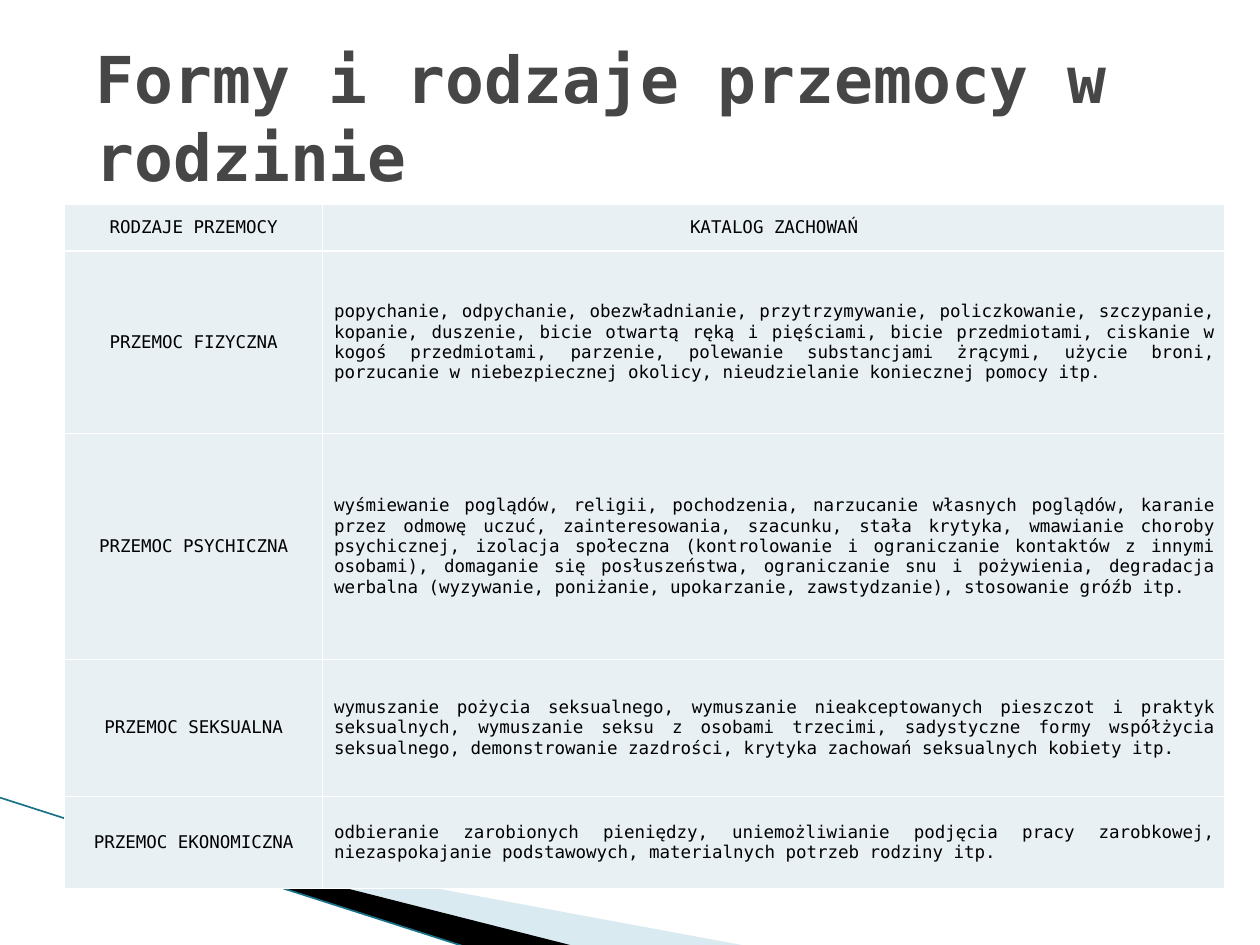
from lxml import etree
from pptx import Presentation
from pptx import util as u
from pptx.dml import color
from pptx.enum import shapes, text
from pptx.oxml import ns

COLOURS = {"title": "464646", "body": "000000", "cell": "E8F0F4", "border": "FFFFFF",
           "pale": "A0CBDC", "dark": "000000", "edge": "17728A"}
FONT = "DejaVu Sans Mono"
TITLE = {"name": FONT, "size": u.Pt(36.9), "bold": True}
BODY = {"name": FONT, "size": u.Pt(10), "bold": False}
CENTRE, JUSTIFY = text.PP_ALIGN.CENTER, text.PP_ALIGN.JUSTIFY
COLUMN_SHARES = (0.2225, 0.7775)
ROW_HEIGHTS = (0.94, 3.68, 4.55, 2.77, 1.85)
ROWS = [
    ("RODZAJE PRZEMOCY", "KATALOG ZACHOWAŃ"),
    ("PRZEMOC FIZYCZNA",
     "popychanie, odpychanie, obezwładnianie, przytrzymywanie, policzkowanie, szczypanie, "
     "kopanie, duszenie, bicie otwartą ręką i pięściami, bicie przedmiotami, ciskanie w kogoś "
     "przedmiotami, parzenie, polewanie substancjami żrącymi, użycie broni, porzucanie w "
     "niebezpiecznej okolicy, nieudzielanie koniecznej pomocy itp."),
    ("PRZEMOC PSYCHICZNA",
     "wyśmiewanie poglądów, religii, pochodzenia, narzucanie własnych poglądów, karanie przez "
     "odmowę uczuć, zainteresowania, szacunku, stała krytyka, wmawianie choroby psychicznej, "
     "izolacja społeczna (kontrolowanie i ograniczanie kontaktów z innymi osobami), domaganie "
     "się posłuszeństwa, ograniczanie snu i pożywienia, degradacja werbalna (wyzywanie, "
     "poniżanie, upokarzanie, zawstydzanie), stosowanie gróźb itp."),
    ("PRZEMOC SEKSUALNA",
     "wymuszanie pożycia seksualnego, wymuszanie nieakceptowanych pieszczot i praktyk "
     "seksualnych, wymuszanie seksu z osobami trzecimi, sadystyczne formy współżycia "
     "seksualnego, demonstrowanie zazdrości, krytyka zachowań seksualnych kobiety itp."),
    ("PRZEMOC EKONOMICZNA",
     "odbieranie zarobionych pieniędzy, uniemożliwianie podjęcia pracy zarobkowej, "
     "niezaspokajanie podstawowych, materialnych potrzeb rodziny itp."),
]


def rgb(name):
    """Return the named colour."""
    return color.RGBColor.from_string(COLOURS[name])


def write(para, words, style, colour, align):
    """Put one formatted span into a paragraph."""
    para.alignment = align
    span = para.add_run()
    span.text = words
    for key, value in style.items():
        setattr(span.font, key, value)
    span.font.color.rgb = rgb(colour)


def add_wedge(page, points, colour, opacity=100):
    """Draw a filled outline through points given in centimetres."""
    corners = [(u.Cm(x), u.Cm(y)) for x, y in points]
    builder = page.shapes.build_freeform(*corners[0])
    builder.add_line_segments(corners[1:], close=True)
    wedge = builder.convert_to_shape()
    wedge.shadow.inherit = False
    wedge.fill.solid()
    wedge.fill.fore_color.rgb = rgb(colour)
    wedge.line.fill.background()
    if opacity < 100:
        tint = wedge.fill._xPr.find(".//" + ns.qn("a:srgbClr"))
        etree.SubElement(tint, ns.qn("a:alpha"), val=str(opacity * 1000))


def add_corner(page, left, top):
    """Draw the slanted bands and their edge line in the lower left corner."""
    def shift(*points):
        """Move points into the corner's box."""
        return [(left + x, top + y) for x, y in points]

    add_wedge(page, shift((1.4, 0.46), (15.11, 3), (11.58, 3), (1.4, 0.43)), "pale", 40)
    add_wedge(page, shift((1.35, 0.4), (11.61, 3), (9.45, 3.02), (1.37, 0.43)), "dark")
    start, end = shift((0, 0), (9.42, 3.02))
    edge = page.shapes.add_connector(shapes.MSO_CONNECTOR.STRAIGHT,
                                     *(u.Cm(v) for v in start + end))
    edge.line.color.rgb = rgb("edge")
    edge.line.width = u.Pt(0.95)
    etree.SubElement(edge._element.spPr, ns.qn("a:effectLst"))


def add_title(page, left, top, width, height):
    """Place the heading."""
    box = page.shapes.add_textbox(*(u.Cm(v) for v in (left, top, width, height)))
    frame = box.text_frame
    frame.word_wrap = True
    frame.vertical_anchor = text.MSO_ANCHOR.MIDDLE
    write(frame.paragraphs[0], "Formy i rodzaje przemocy w rodzinie", TITLE, "title",
          text.PP_ALIGN.LEFT)


def add_borders(cell):
    """Give a cell thin borders on all four sides."""
    props = cell._tc.get_or_add_tcPr()
    for place, side in enumerate(("lnL", "lnR", "lnT", "lnB")):
        line = etree.Element(ns.qn("a:" + side), w=str(u.Pt(1)))
        fill = etree.SubElement(line, ns.qn("a:solidFill"))
        etree.SubElement(fill, ns.qn("a:srgbClr"), val=COLOURS["border"])
        props.insert(place, line)


def add_catalogue(page, left, top, width):
    """Place the table of kinds of violence and their behaviours."""
    frame = page.shapes.add_table(len(ROWS), len(COLUMN_SHARES), u.Cm(left), u.Cm(top),
                                  u.Cm(width), u.Cm(sum(ROW_HEIGHTS)))
    table = frame.table
    for column, share in zip(table.columns, COLUMN_SHARES):
        column.width = u.Cm(width * share)
    for r, (height, words) in enumerate(zip(ROW_HEIGHTS, ROWS)):
        table.rows[r].height = u.Cm(height)
        for c, word in enumerate(words):
            cell = table.cell(r, c)
            for side in ("left", "right", "top", "bottom"):
                setattr(cell, "margin_" + side, u.Cm(0.23))
            cell.vertical_anchor = text.MSO_ANCHOR.MIDDLE
            cell.fill.solid()
            cell.fill.fore_color.rgb = rgb("cell")
            add_borders(cell)
            write(cell.text_frame.paragraphs[0], word, BODY, "body",
                  JUSTIFY if r and c else CENTRE)


def main():
    """Build and save the slide."""
    deck = Presentation()
    deck.slide_width, deck.slide_height = u.Cm(25.4), u.Cm(19.05)
    page = deck.slides.add_slide(deck.slide_layouts[6])
    add_corner(page, 0, 16.08)
    add_title(page, 1.68, 0.76, 22.86, 3.18)
    add_catalogue(page, 1.3, 4.12, 23.4)
    deck.save("out.pptx")


if __name__ == "__main__":
    main()
